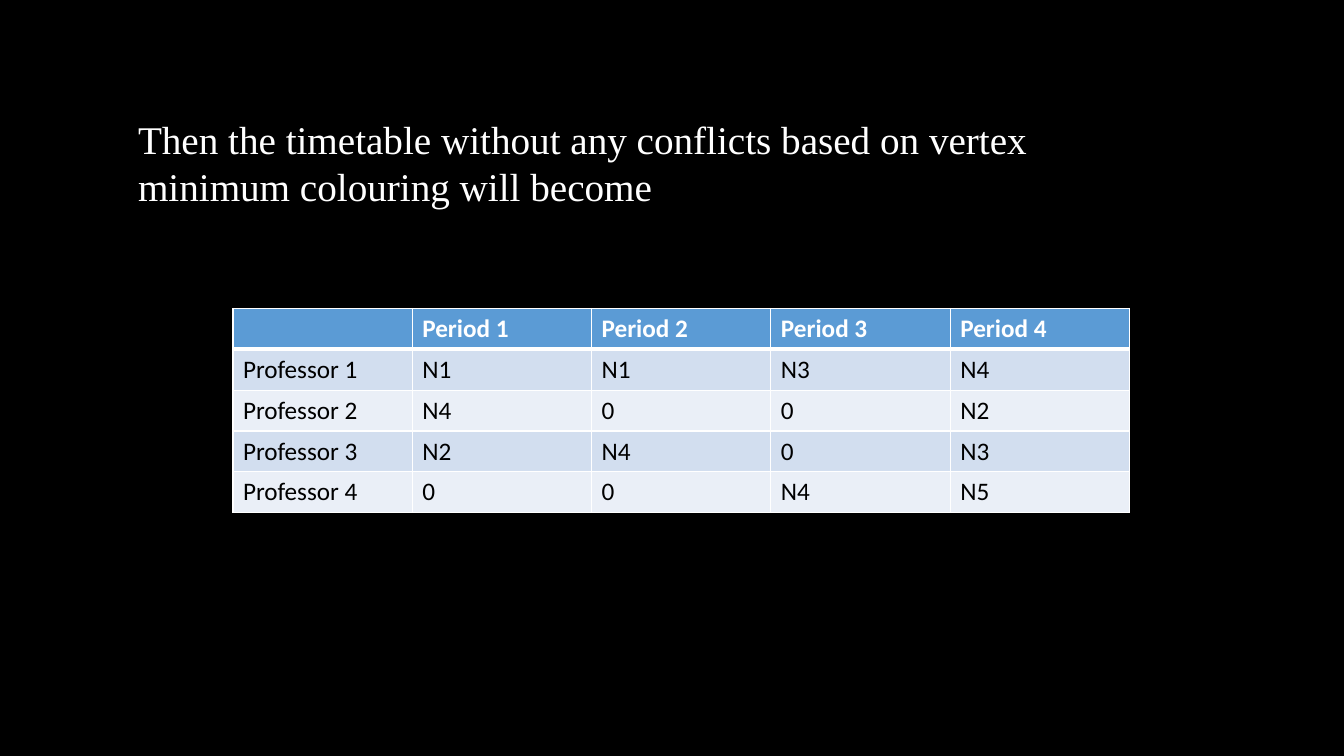
from dataclasses import dataclass

from pptx import Presentation, util as u
from pptx.dml.color import RGBColor
from pptx.enum import text
from pptx.oxml import ns
from lxml import etree


@dataclass(frozen=True)
class Theme:
    background: str = "000000"
    light: str = "FFFFFF"
    dark: str = "000000"
    header: str = "5B9BD5"
    bands: tuple[str, str] = ("D2DEEF", "EAEFF7")
    statement_font: str = "Times New Roman"
    table_font: str = "Calibri"
    statement_size: float = 28
    statement_spacing: float = 33.6
    table_size: float = 18
    thin_line: float = 1
    thick_line: float = 3


@dataclass(frozen=True)
class TextStyle:
    font: str
    size: float
    color: str
    bold: bool = False


@dataclass(frozen=True)
class CellStyle:
    fill: str
    text: TextStyle
    top_line: float
    bottom_line: float


@dataclass(frozen=True)
class ProfessorRow:
    name: str
    classes: tuple[str, ...]


THEME = Theme()
STATEMENT = "Then the timetable without any conflicts based on vertex minimum colouring will become"
HEADINGS = ("", "Period 1", "Period 2", "Period 3", "Period 4")
PROFESSORS = (
    ProfessorRow("Professor 1", ("N1", "N1", "N3", "N4")),
    ProfessorRow("Professor 2", ("N4", "0", "0", "N2")),
    ProfessorRow("Professor 3", ("N2", "N4", "0", "N3")),
    ProfessorRow("Professor 4", ("0", "0", "N4", "N5")),
)
COLUMN_WIDTH = u.Cm(4.52)
ROW_HEIGHT = u.Cm(1.03)


def format_runs(paragraph, style: TextStyle) -> None:
    for run in paragraph.runs:
        run.font.name = style.font
        run.font.size = u.Pt(style.size)
        run.font.bold = style.bold
        run.font.color.rgb = RGBColor.from_string(style.color)


def add_border(cell, side: str, width: float) -> None:
    properties = cell._tc.get_or_add_tcPr()
    line = etree.SubElement(properties, ns.qn(f"a:ln{side}"), w=str(u.Pt(width)))
    fill = etree.SubElement(line, ns.qn("a:solidFill"))
    etree.SubElement(fill, ns.qn("a:srgbClr"), val=THEME.light)


def style_for_row(row_index: int) -> CellStyle:
    if row_index == 0:
        header_text = TextStyle(THEME.table_font, THEME.table_size, THEME.light, True)
        return CellStyle(THEME.header, header_text, THEME.thin_line, THEME.thick_line)
    body_text = TextStyle(THEME.table_font, THEME.table_size, THEME.dark)
    top_line = THEME.thick_line if row_index == 1 else THEME.thin_line
    return CellStyle(THEME.bands[(row_index - 1) % 2], body_text, top_line, THEME.thin_line)


def draw_cell(cell, content: str, style: CellStyle) -> None:
    cell.text_frame.text = content
    format_runs(cell.text_frame.paragraphs[0], style.text)
    widths = {"L": THEME.thin_line, "R": THEME.thin_line, "T": style.top_line, "B": style.bottom_line}
    for side, width in widths.items():
        add_border(cell, side, width)
    cell.fill.solid()
    cell.fill.fore_color.rgb = RGBColor.from_string(style.fill)


def draw_statement(slide) -> None:
    shape = slide.shapes.add_textbox(u.Cm(3.23), u.Cm(2.77), u.Cm(23.93), u.Cm(3.84))
    frame = shape.text_frame
    frame.word_wrap = True
    frame.vertical_anchor = text.MSO_ANCHOR.TOP
    frame.text = STATEMENT
    paragraph = frame.paragraphs[0]
    paragraph.line_spacing = u.Pt(THEME.statement_spacing)
    format_runs(paragraph, TextStyle(THEME.statement_font, THEME.statement_size, THEME.light))


def draw_timetable(slide) -> None:
    rows = [HEADINGS] + [(professor.name, *professor.classes) for professor in PROFESSORS]
    table = slide.shapes.add_table(
        len(rows), len(HEADINGS), u.Cm(5.87), u.Cm(7.77),
        COLUMN_WIDTH * len(HEADINGS), ROW_HEIGHT * len(rows),
    ).table
    for column in table.columns:
        column.width = COLUMN_WIDTH
    for row_index, contents in enumerate(rows):
        table.rows[row_index].height = ROW_HEIGHT
        for column_index, content in enumerate(contents):
            draw_cell(table.cell(row_index, column_index), content, style_for_row(row_index))


def main() -> None:
    presentation = Presentation()
    presentation.slide_width = u.Cm(33.87)
    presentation.slide_height = u.Cm(19.05)
    slide = presentation.slides.add_slide(presentation.slide_layouts[6])
    slide.background.fill.solid()
    slide.background.fill.fore_color.rgb = RGBColor.from_string(THEME.background)
    draw_statement(slide)
    draw_timetable(slide)
    presentation.save("out.pptx")


if __name__ == "__main__":
    main()
